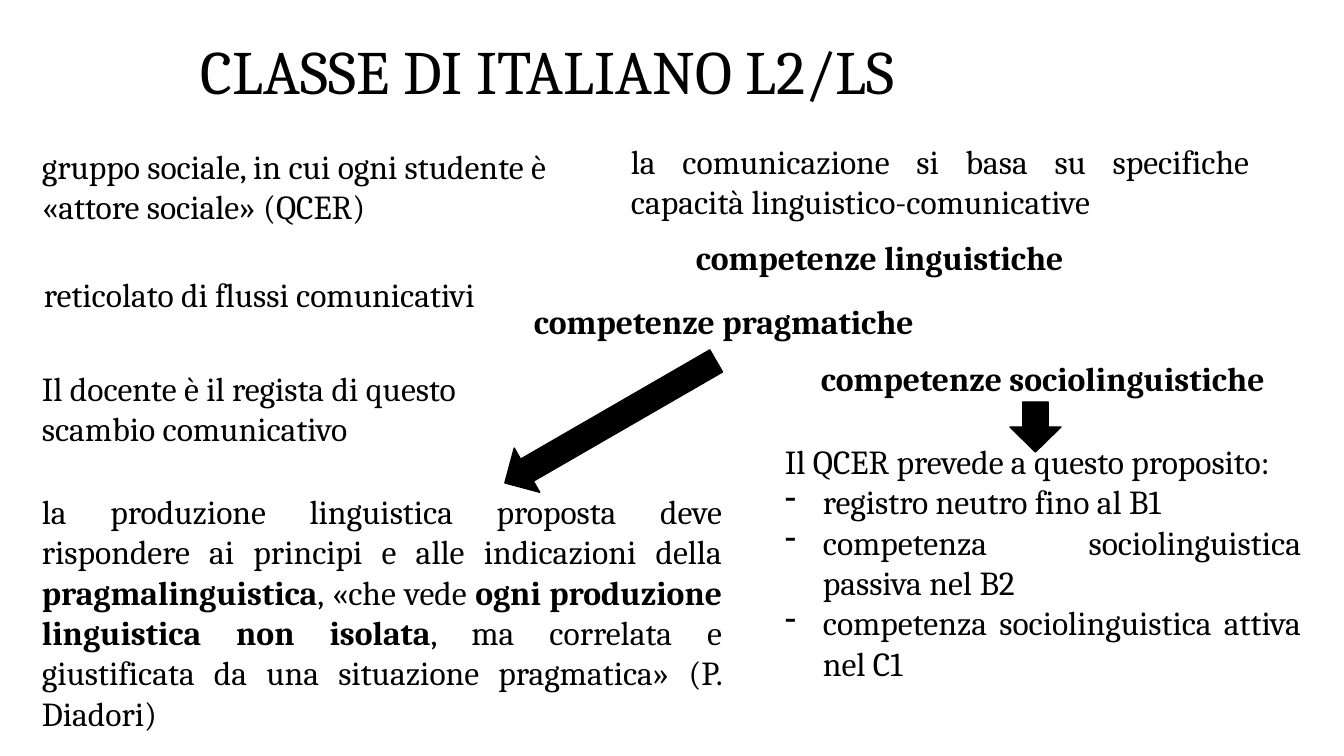
from dataclasses import dataclass

from lxml.etree import SubElement
from pptx import Presentation
from pptx.dml.color import RGBColor
from pptx.enum.shapes import MSO_SHAPE
from pptx.enum.text import MSO_ANCHOR, PP_ALIGN
from pptx.oxml.ns import qn
from pptx.util import Pt

PX = 914400 / 100.8


@dataclass(frozen=True)
class Theme:
    font: str = "Cambria"
    ink: RGBColor = RGBColor(0, 0, 0)
    paper: RGBColor = RGBColor(255, 255, 255)
    title: int = 44
    body: int = 24


@dataclass(frozen=True)
class Box:
    left: int
    top: int
    width: int
    height: int

    def inner(self, left, top, width, height):
        return Box(self.left + left, self.top + top, width, height)

    def emu(self):
        return [px(n) for n in (self.left, self.top, self.width, self.height)]


THEME = Theme()


def px(length):
    return round(length * PX)


def add_text(slide, box, paragraphs, size=THEME.body, bold=None,
             align=PP_ALIGN.LEFT, spacing=1.0, before=0):
    frame = slide.shapes.add_textbox(*box.emu()).text_frame
    frame.word_wrap = True
    for index, content in enumerate(paragraphs):
        paragraph = frame.add_paragraph() if index else frame.paragraphs[0]
        paragraph.alignment = align
        paragraph.line_spacing = spacing
        paragraph.space_before = Pt(before)
        paragraph.font.name = THEME.font
        paragraph.font.size = Pt(size)
        paragraph.font.color.rgb = THEME.ink
        paragraph.font.bold = bold
        for position, words in enumerate(content.split("**")):
            run = paragraph.add_run()
            run.text = words
            if position % 2:
                run.font.bold = True
    return frame


def add_dash(paragraph):
    properties = paragraph._p.get_or_add_pPr()
    properties.set("marL", str(px(38)))
    properties.set("indent", str(px(-38)))
    SubElement(properties, qn("a:buFontTx"))
    SubElement(properties, qn("a:buChar")).set("char", "-")


def add_down_arrow(slide, box, rotation=0):
    arrow = slide.shapes.add_shape(MSO_SHAPE.DOWN_ARROW, *box.emu())
    arrow.rotation = rotation
    arrow.shadow.inherit = False
    arrow.fill.solid()
    arrow.fill.fore_color.rgb = THEME.ink
    arrow.line.color.rgb = THEME.ink
    arrow.line.width = Pt(1)


def draw_title(slide, box):
    add_text(slide, box, ["CLASSE DI ITALIANO L2/LS"], THEME.title, spacing=0.9)


def draw_classroom(slide, box):
    add_text(slide, box.inner(0, 0, 571, 92),
             ["gruppo sociale, in cui ogni studente è «attore sociale» (QCER)"])
    network = add_text(slide, box.inner(0, 122, 542, 68),
                       ["reticolato di flussi comunicativi"], spacing=0.9)
    network.vertical_anchor = MSO_ANCHOR.MIDDLE
    network.margin_left = network.margin_right = px(12)
    network.margin_top = network.margin_bottom = 0
    add_text(slide, box.inner(0, 222, 533, 92),
             ["Il docente è il regista di questo scambio comunicativo"])


def draw_competences(slide, box):
    add_text(slide, box.inner(97, 0, 638, 105),
             ["la comunicazione si basa su specifiche capacità linguistico-comunicative"],
             align=PP_ALIGN.JUSTIFY)
    competences = [
        ("linguistiche", box.inner(162, 104, 446, 44), 0.8),
        ("pragmatiche", box.inner(0, 168, 446, 44), 0.8),
        ("sociolinguistiche", box.inner(287, 222, 500, 50), 0.9),
    ]
    for kind, place, spacing in competences:
        add_text(slide, place, [f"competenze {kind}"], bold=True,
                 align=PP_ALIGN.JUSTIFY, spacing=spacing, before=10)
    add_down_arrow(slide, box.inner(61, 164, 51, 244), 60)
    add_down_arrow(slide, box.inner(486, 266, 51, 50))


def draw_pragmalinguistics(slide, box):
    add_text(slide, box, [
        "la produzione linguistica proposta deve rispondere ai principi e alle "
        "indicazioni della **pragmalinguistica**, «che vede **ogni produzione "
        "linguistica non isolata**, ma correlata e giustificata da una situazione "
        "pragmatica» (P. Diadori)"], align=PP_ALIGN.JUSTIFY)


def draw_qcer_levels(slide, box):
    levels = add_text(slide, box, [
        "Il QCER prevede a questo proposito:",
        "registro neutro fino al B1",
        "competenza sociolinguistica passiva nel B2",
        "competenza sociolinguistica attiva nel C1",
    ], align=PP_ALIGN.JUSTIFY)
    for level in levels.paragraphs[1:]:
        add_dash(level)


def main():
    deck = Presentation()
    deck.slide_width, deck.slide_height = px(1344), px(756)
    slide = deck.slides.add_slide(deck.slide_layouts[6])
    slide.background.fill.solid()
    slide.background.fill.fore_color.rgb = THEME.paper
    draw_title(slide, Box(191, 36, 907, 88))
    draw_classroom(slide, Box(32, 141, 571, 314))
    draw_competences(slide, Box(524, 136, 787, 408))
    draw_pragmalinguistics(slide, Box(32, 486, 700, 254))
    draw_qcer_levels(slide, Box(775, 436, 536, 254))
    deck.save("out.pptx")


if __name__ == "__main__":
    main()
